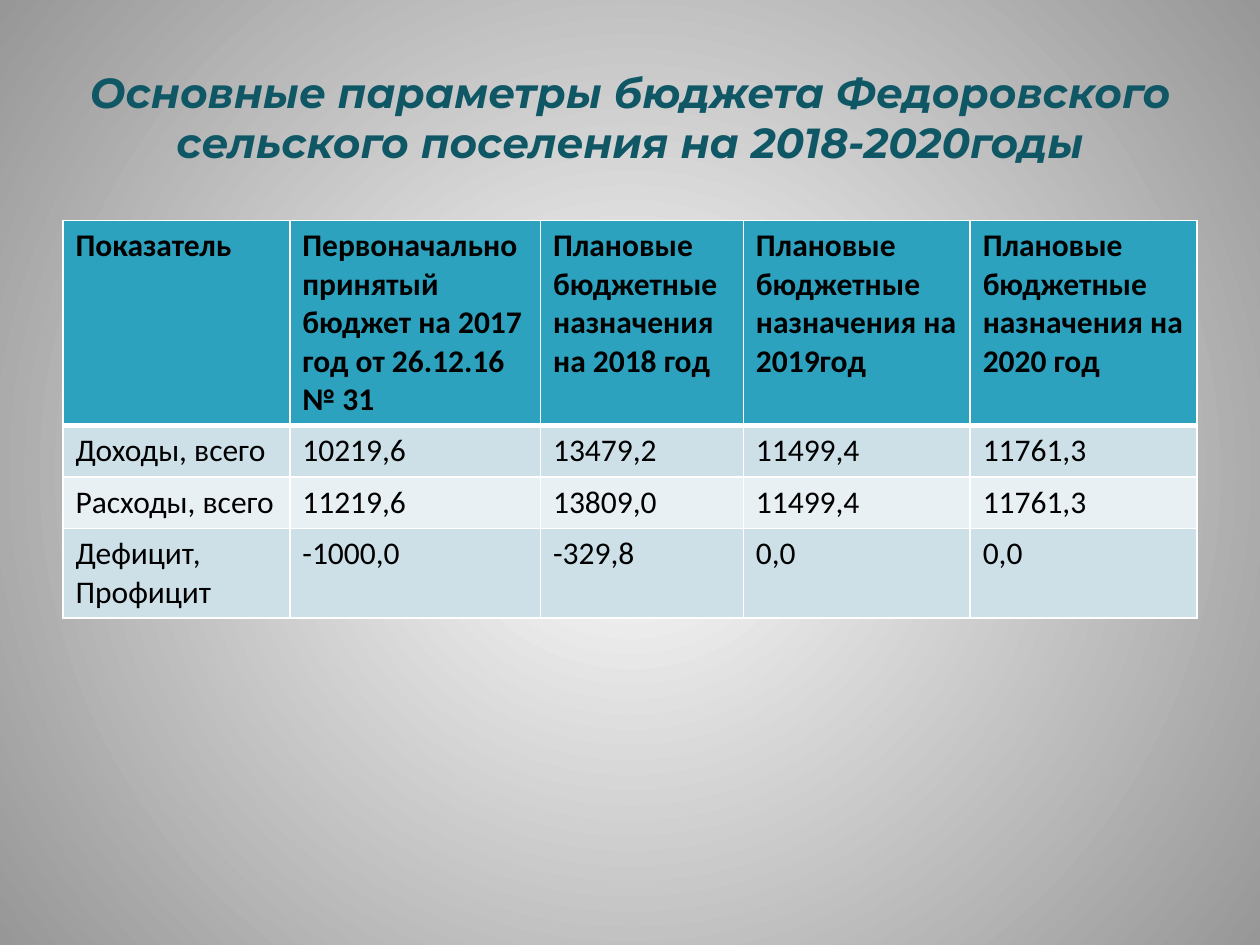
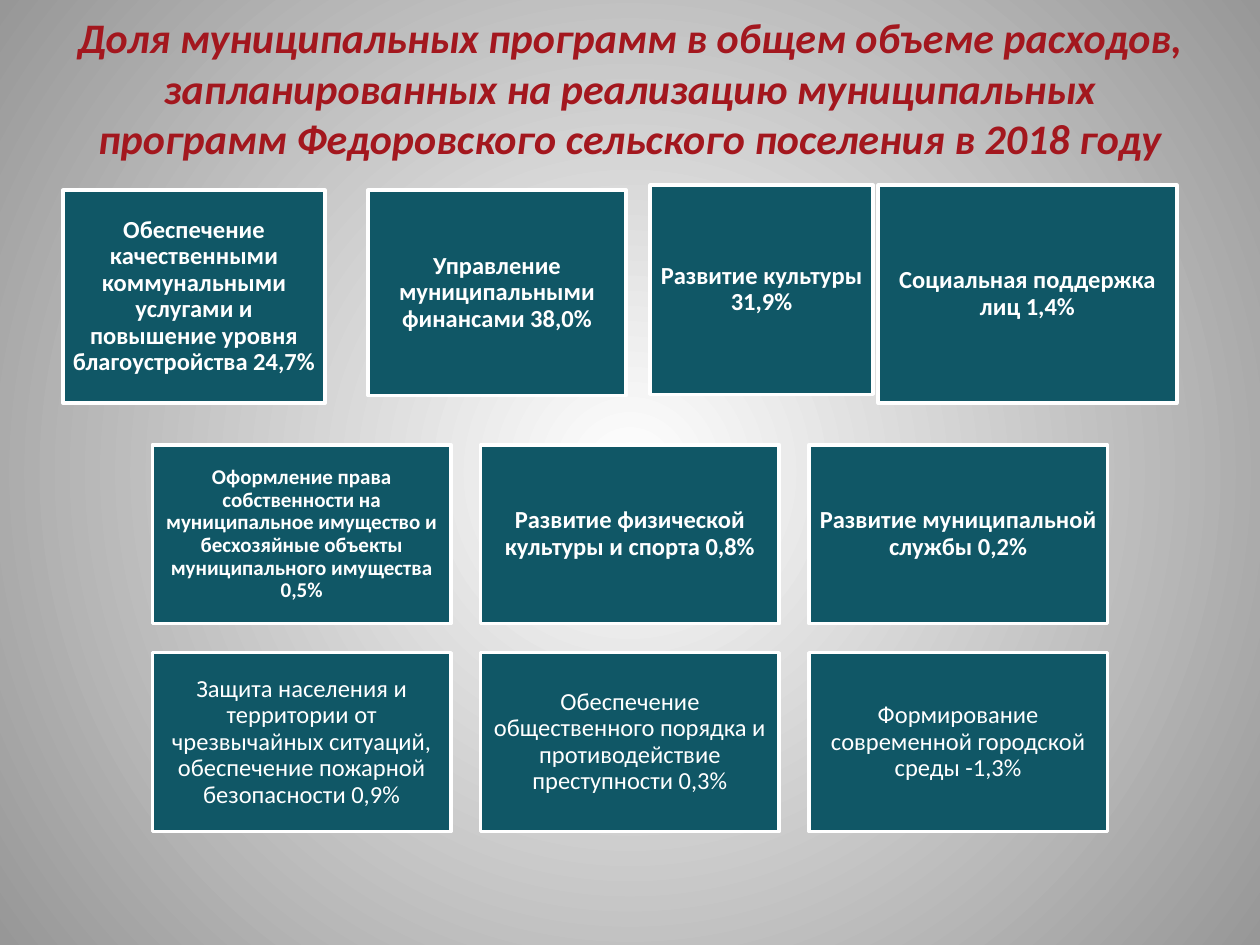
"""Builds two budget slides: a table of main figures and a grid of programme shares."""
from lxml import etree
from pptx import Presentation
from pptx.dml.color import RGBColor
from pptx.enum.shapes import MSO_SHAPE
from pptx.enum.text import MSO_ANCHOR, MSO_AUTO_SIZE, PP_ALIGN
from pptx.oxml.ns import qn
from pptx.util import Inches, Pt

RECT = MSO_SHAPE.RECTANGLE
MIDDLE = MSO_ANCHOR.MIDDLE
CENTER = PP_ALIGN.CENTER
NO_FIT = MSO_AUTO_SIZE.NONE

TEAL, RED, WHITE, BLACK, GREY = "105766", "A3171E", "FFFFFF", "000000", "979797"
HEADER, BAND_DARK, BAND_LIGHT = "2DA2BF", "CDE0E8", "E8F0F4"
BODY_FONT = "Calibri"
MARGIN = 0.5


def rgb(value):
    """Turn a hex string into a colour."""
    return RGBColor.from_string(value)


def add_run(p, text, size, color, bold=False, italic=False, font=BODY_FONT):
    """Add one formatted run to a paragraph."""
    r = p.add_run()
    r.text = text
    r.font.name, r.font.size = font, Pt(size)
    r.font.bold, r.font.italic = bold, italic
    r.font.color.rgb = rgb(color)


prs = Presentation()
prs.slide_width, prs.slide_height = Inches(10), Inches(7.5)

fill = prs.slide_master.background.fill
fill.gradient()
for stop, position, color in zip(fill.gradient_stops, (0, 1), (WHITE, GREY)):
    stop.position = position
    stop.color.rgb = rgb(color)
grad = prs.slide_master.element.find(".//" + qn("a:gradFill"))
grad.remove(grad.find(qn("a:lin")))
radial = etree.SubElement(grad, qn("a:path"), {"path": "circle"})
etree.SubElement(radial, qn("a:fillToRect"), dict.fromkeys("ltrb", "50000"))

titles = [
    ("Основные параметры бюджета Федоровского сельского поселения на 2018-2020годы",
     0.3, 1.25, TEAL, "Montserrat"),
    ("Доля муниципальных программ в общем объеме расходов, запланированных на "
     "реализацию муниципальных программ Федоровского сельского поселения в 2018 году",
     0, 1.39, RED, BODY_FONT),
]
slides = []
for text, top, height, color, font in titles:
    s = prs.slides.add_slide(prs.slide_layouts[5])
    sp = s.shapes.title
    sp.left, sp.top = Inches(MARGIN), Inches(top)
    sp.width, sp.height = Inches(9), Inches(height)
    tf = sp.text_frame
    tf.word_wrap, tf.auto_size, tf.vertical_anchor = True, NO_FIT, MIDDLE
    p = tf.paragraphs[0]
    p.alignment = CENTER
    add_run(p, text, 24, color, True, True, font)
    slides.append(s)
budget_slide, programme_slide = slides

budget_rows = [
    ["Показатель", "Первоначально принятый бюджет на 2017 год от 26.12.16 № 31",
     "Плановые бюджетные назначения на 2018 год",
     "Плановые бюджетные назначения на 2019год",
     "Плановые бюджетные назначения на 2020 год"],
    ["Доходы, всего", "10219,6", "13479,2", "11499,4", "11761,3"],
    ["Расходы, всего", "11219,6", "13809,0", "11499,4", "11761,3"],
    ["Дефицит, Профицит", "-1000,0", "-329,8", "0,0", "0,0"],
]
col_widths = [1.8, 1.99, 1.61, 1.8, 1.8]
row_heights = [1.61, 0.41, 0.41, 0.68]
row_fills = [HEADER, BAND_DARK, BAND_LIGHT, BAND_DARK]
table = budget_slide.shapes.add_table(
    len(budget_rows), len(col_widths), Inches(MARGIN), Inches(1.75),
    Inches(sum(col_widths)), Inches(sum(row_heights))).table
table.horz_banding = False
for column, width in zip(table.columns, col_widths):
    column.width = Inches(width)
for i, row in enumerate(table.rows):
    row.height = Inches(row_heights[i])
    for cell, text in zip(row.cells, budget_rows[i]):
        add_run(cell.text_frame.paragraphs[0], text, 18, BLACK, bold=i == 0)
        cell.fill.solid()
        cell.fill.fore_color.rgb = rgb(row_fills[i])
        tcPr = cell._tc.get_or_add_tcPr()
        for k, side in enumerate("LRTB"):
            under_header = (i, side) in [(0, "B"), (1, "T")]
            ln = etree.Element(qn("a:ln" + side), w=str(Pt(3 if under_header else 1)))
            solid = etree.SubElement(ln, qn("a:solidFill"))
            etree.SubElement(solid, qn("a:srgbClr"), val=WHITE)
            tcPr.insert(k, ln)

COL, ROW = 2.605, 1.65
GRID_LEFT, GRID_TOP = 1.21, 3.53
BOX_W, BOX_H = 2.37, 1.42
programmes = [
    ("Обеспечение качественными коммунальными услугами и повышение уровня "
     "благоустройства 24,7%", 0.5, 1.51, 2.08, 1.69),
    ("Управление муниципальными финансами 38,0%", 2.92, 1.51, 2.05, 1.63),
    ("Развитие культуры 31,9%", 5.16, 1.47, 1.77, 1.66),
    ("Социальная поддержка лиц 1,4%", 6.97, 1.47, BOX_W, 1.73),
]
grid_texts = [
    "Оформление права собственности на муниципальное имущество и бесхозяйные "
    "объекты муниципального имущества 0,5%",
    "Развитие физической культуры и спорта 0,8%",
    "Развитие муниципальной службы 0,2%",
    "Защита населения и территории от чрезвычайных ситуаций, обеспечение "
    "пожарной безопасности 0,9%",
    "Обеспечение общественного порядка и противодействие преступности 0,3%",
    "Формирование современной городской среды -1,3%",
]
for i, text in enumerate(grid_texts):
    programmes.append((text, GRID_LEFT + i % 3 * COL, GRID_TOP + i // 3 * ROW, BOX_W, BOX_H))

for i, (text, *box) in enumerate(programmes):
    sp = programme_slide.shapes.add_shape(RECT, *map(Inches, box))
    sp.shadow.inherit = False
    sp.fill.solid()
    sp.fill.fore_color.rgb = rgb(TEAL)
    sp.line.color.rgb = rgb(WHITE)
    sp.line.width = Pt(2)
    size, inset = (12, 0.05) if text == grid_texts[0] else (14, 0.06)
    tf = sp.text_frame
    tf.word_wrap, tf.vertical_anchor = True, MIDDLE
    tf.margin_left = tf.margin_right = tf.margin_top = tf.margin_bottom = Inches(inset)
    p = tf.paragraphs[0]
    p.alignment, p.line_spacing = CENTER, 0.9
    add_run(p, text, size, WHITE, bold=i < 7)

prs.save("out.pptx")
